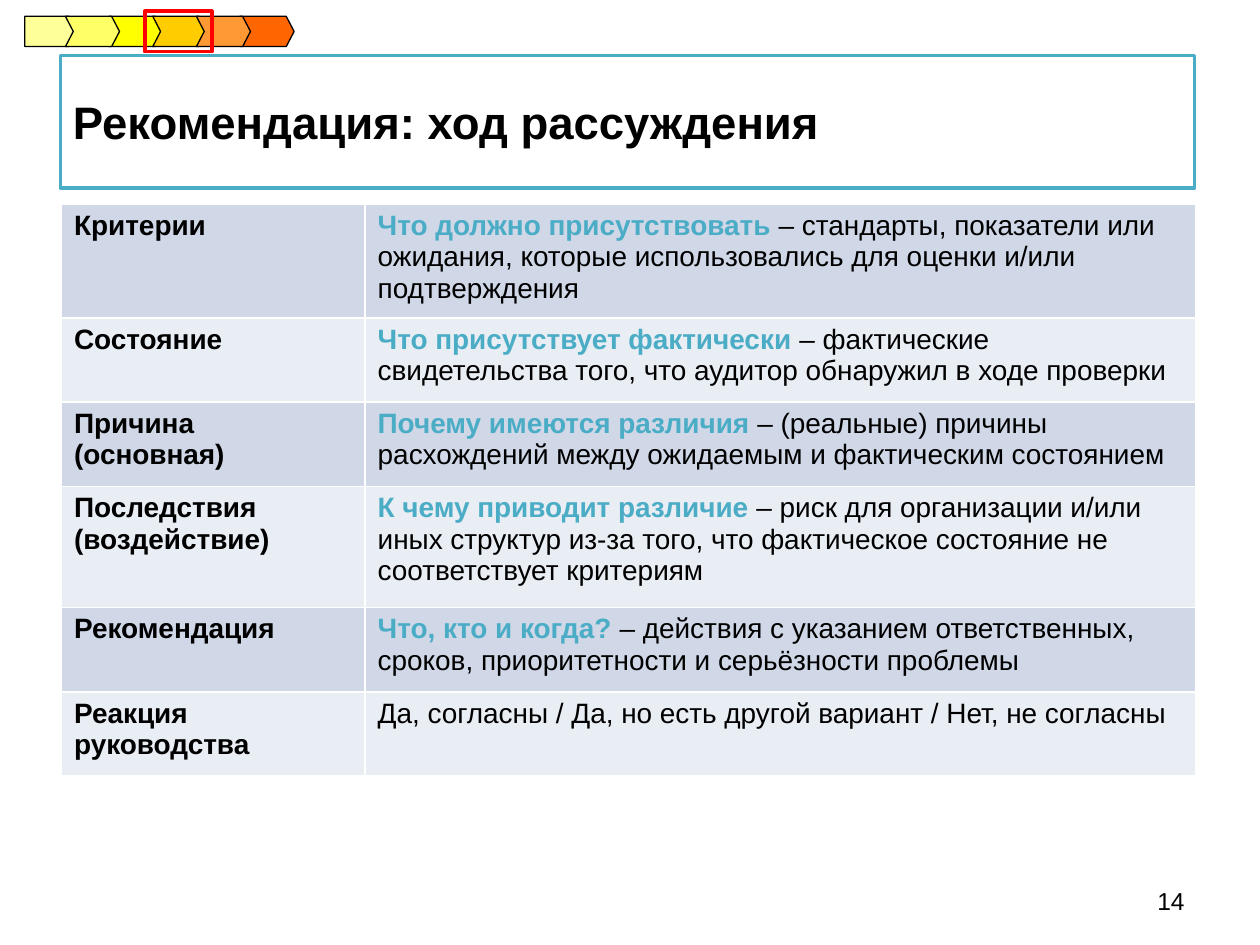
from typing import NamedTuple

from lxml import etree
from pptx import Presentation
from pptx import util as u
from pptx.dml.color import RGBColor
from pptx.enum import shapes, text
from pptx.oxml.ns import qn

BLACK, WHITE, TEAL = "000000", "FFFFFF", "4BACC6"
BANDS = ("D0D8E8", "E9EDF4")
MSO = shapes.MSO_SHAPE


class Step(NamedTuple):
    index: int
    color: str


class Row(NamedTuple):
    label: str
    question: str
    answer: str
    height: float = 1.7


# Listed from back to front
STEPS = [Step(0, "FFFF99"), Step(2, "FFFF00"), Step(3, "FFCC00"),
         Step(5, "FF6600"), Step(4, "FF9933"), Step(1, "FFFF66")]

ROWS = [
    Row("Критерии", "Что должно присутствовать ",
        "– стандарты, показатели или ожидания, которые использовались "
        "для оценки и/или подтверждения"),
    Row("Состояние", "Что присутствует фактически ",
        "– фактические свидетельства того, что аудитор обнаружил в ходе проверки"),
    Row("Причина (основная)", "Почему имеются различия ",
        "– (реальные) причины расхождений между ожидаемым и фактическим состоянием"),
    Row("Последствия (воздействие)", "К чему приводит различие ",
        "– риск для организации и/или иных структур из-за того, что "
        "фактическое состояние не соответствует критериям", 2.44),
    Row("Рекомендация", "Что, кто и когда? ",
        "– действия с указанием ответственных, сроков, приоритетности "
        "и серьёзности проблемы"),
    Row("Реакция руководства", "",
        "Да, согласны / Да, но есть другой вариант / Нет, не согласны"),
]


def rgb(value: str) -> RGBColor:
    return RGBColor.from_string(value)


def add_text(p, content: str, *, size: float = 16, color: str = BLACK,
             bold: bool = False) -> None:
    r = p.add_run()
    r.text = content
    r.font.name = "Arial"
    r.font.size = u.Pt(size)
    r.font.bold = bold
    r.font.color.rgb = rgb(color)


def add_box(parent, kind, x: float, y: float, w: float, h: float, *,
            line: str, width: float, fill: str = ""):
    sp = parent.add_shape(kind, u.Cm(x), u.Cm(y), u.Cm(w), u.Cm(h))
    sp.shadow.inherit = False
    if fill:
        sp.fill.solid()
        sp.fill.fore_color.rgb = rgb(fill)
    else:
        sp.fill.background()
    sp.line.color.rgb = rgb(line)
    sp.line.width = u.Pt(width)
    return sp


def style_cell(cell, fill: str) -> None:
    cell.fill.solid()
    cell.fill.fore_color.rgb = rgb(fill)
    tc_pr = cell._tc.get_or_add_tcPr()
    for i, side in enumerate(("lnL", "lnR", "lnT", "lnB")):
        ln = etree.Element(qn(f"a:{side}"), w=str(u.Pt(1)))
        solid = etree.SubElement(ln, qn("a:solidFill"))
        etree.SubElement(solid, qn("a:srgbClr"), val=WHITE)
        tc_pr.insert(i, ln)


def add_step(parent, step: Step) -> None:
    first = step.index == 0
    kind = MSO.PENTAGON if first else MSO.CHEVRON
    x, w = (0.5, 1.05) if first else (1.32 + 0.88 * (step.index - 1), 1.09)
    sp = add_box(parent, kind, x, 0.33, w, 0.61,
                 line=BLACK, width=0.75, fill=step.color)
    sp.adjustments[0] = 0.26


def add_reasoning_table(s) -> None:
    widths = (6.12, 16.74)
    table = s.shapes.add_table(
        len(ROWS), len(widths), u.Cm(1.24), u.Cm(4.12), u.Cm(sum(widths)),
        u.Cm(sum(row.height for row in ROWS))).table
    table.first_row = False
    table.horz_banding = False
    for col, width in zip(table.columns, widths):
        col.width = u.Cm(width)
    for i, row in enumerate(ROWS):
        table.rows[i].height = u.Cm(row.height)
        label, detail = table.cell(i, 0), table.cell(i, 1)
        for cell in (label, detail):
            style_cell(cell, BANDS[i % 2])
        add_text(label.text_frame.paragraphs[0], row.label, bold=True)
        p = detail.text_frame.paragraphs[0]
        if row.question:
            add_text(p, row.question, color=TEAL, bold=True)
        add_text(p, row.answer)


def main() -> None:
    prs = Presentation()
    prs.slide_width, prs.slide_height = u.Cm(25.4), u.Cm(19.05)
    s = prs.slides.add_slide(prs.slide_layouts[6])

    # Slide number
    tf = s.shapes.add_textbox(u.Cm(18.21), u.Cm(17.65), u.Cm(5.92), u.Cm(1.02)).text_frame
    tf.word_wrap = True
    tf.vertical_anchor = text.MSO_ANCHOR.MIDDLE
    tf.paragraphs[0].alignment = text.PP_ALIGN.RIGHT
    add_text(tf.paragraphs[0], "14", size=14)

    add_reasoning_table(s)

    # Progress steps with the current one framed
    group = s.shapes.add_group_shape().shapes
    for step in STEPS:
        add_step(group, step)
    add_box(group, MSO.RECTANGLE, 2.92, 0.23, 1.35, 0.81, line="FF0000", width=2.25)

    # Title
    sp = add_box(s.shapes, MSO.RECTANGLE, 1.22, 1.12, 22.86, 2.67,
                 line=TEAL, width=2, fill=WHITE)
    tf = sp.text_frame
    tf.word_wrap = True
    tf.vertical_anchor = text.MSO_ANCHOR.MIDDLE
    tf.paragraphs[0].alignment = text.PP_ALIGN.LEFT
    add_text(tf.paragraphs[0], "Рекомендация: ход рассуждения", size=26, bold=True)

    prs.save("out.pptx")


if __name__ == "__main__":
    main()
